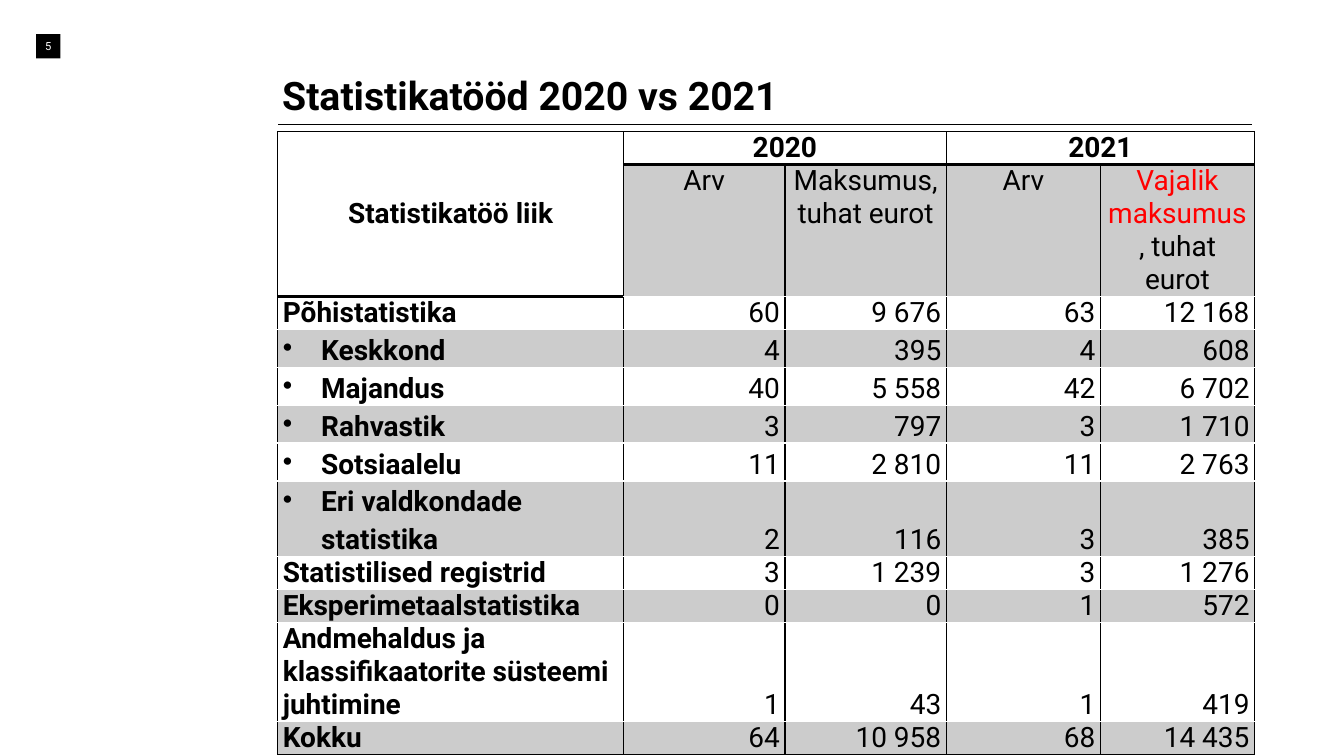
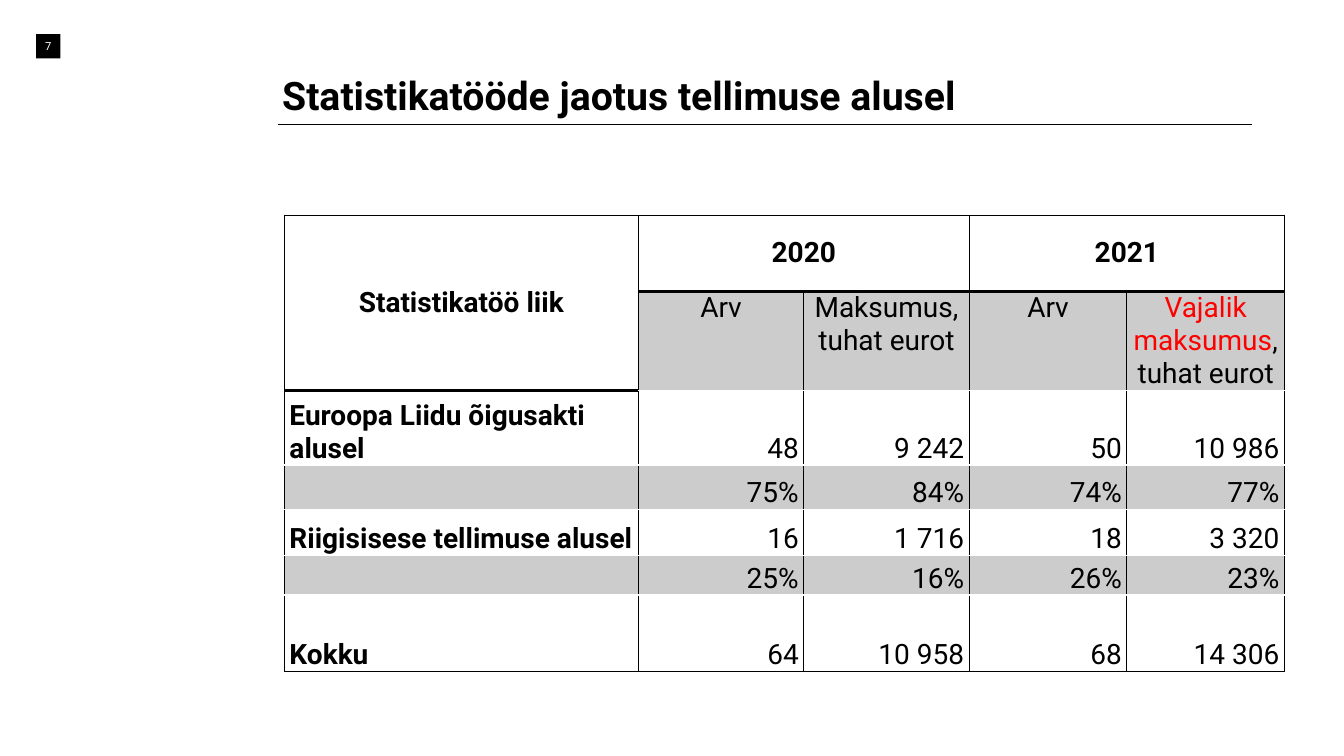
from lxml import etree
from pptx import Presentation
from pptx.dml.color import RGBColor
from pptx.enum.shapes import MSO_CONNECTOR, MSO_SHAPE
from pptx.enum.text import MSO_ANCHOR, MSO_AUTO_SIZE, PP_ALIGN
from pptx.oxml.ns import qn
from pptx.util import Pt

BLACK = RGBColor(0x00, 0x00, 0x00)
WHITE = RGBColor(0xFF, 0xFF, 0xFF)
RED = RGBColor(0xFF, 0x00, 0x00)
LEFT, CENTER, RIGHT = PP_ALIGN.LEFT, PP_ALIGN.CENTER, PP_ALIGN.RIGHT
TOP, MIDDLE, BOTTOM = MSO_ANCHOR.TOP, MSO_ANCHOR.MIDDLE, MSO_ANCHOR.BOTTOM
STRAIGHT, RECTANGLE = MSO_CONNECTOR.STRAIGHT, MSO_SHAPE.RECTANGLE
NO_AUTOFIT = MSO_AUTO_SIZE.NONE

FONT = "Roboto"
TITLE_ONLY = 5
SHADE_ALPHA = 20
THIN, THICK = 1, 2
BULLET_INDENT = 27.4
TITLE_BOX = (198.7, 23.8, 695.5, 64.1)
NUMBER_BOX = (25.9, 24.5, 17.3, 17.3)
RULE_Y = 88.7

TITLE_FONT = {"name": FONT, "size": Pt(28), "bold": True}
NUMBER_FONT = {"name": FONT, "size": Pt(8), "bold": False}
HEAD_FONT = {"name": FONT, "size": Pt(20), "bold": True}
BODY_FONT = {**HEAD_FONT, "bold": False}

LABEL_HEAD = "Statistikatöö liik"
YEARS = ["2020", "2021"]
MEASURES = [
    [("Arv", BLACK)],
    [("Maksumus, tuhat eurot", BLACK)],
    [("Arv", BLACK)],
    [("Vajalik maksumus", RED), (", tuhat eurot", BLACK)],
]

# Each row: label, four values, height
WORK_ROWS = [
    ("Põhistatistika", ("60", "9 676", "63", "12 168"), 21.6),
    ("• Keskkond", ("4", "395", "4", "608"), 23),
    ("• Majandus", ("40", "5 558", "42", "6 702"), 23),
    ("• Rahvastik", ("3", "797", "3", "1 710"), 23),
    ("• Sotsiaalelu", ("11", "2 810", "11", "2 763"), 23),
    ("• Eri valdkondade statistika", ("2", "116", "3", "385"), 48.2),
    ("Statistilised registrid", ("3", "1 239", "3", "1 276"), 21.6),
    ("Eksperimetaalstatistika", ("0", "0", "1", "572"), 21.6),
    ("Andmehaldus ja klassifikaatorite süsteemi juhtimine",
     ("1", "43", "1", "419"), 64.8),
    ("Kokku", ("64", "10 958", "68", "14 435"), 21.6),
]
ORDER_ROWS = [
    ("Euroopa Liidu õigusakti alusel", ("48", "9 242", "50", "10 986"), 53.3),
    ("", ("75%", "84%", "74%", "77%"), 31.7),
    ("Riigisisese tellimuse alusel", ("16", "1 716", "18", "3 320"), 33.1),
    ("", ("25%", "16%", "26%", "23%"), 28.1),
    ("Kokku", ("64", "10 958", "68", "14 306"), 54.7),
]


def points(box):
    return [Pt(length) for length in box]


def apply(target, formats):
    for attribute, value in formats.items():
        setattr(target, attribute, value)


def set_margins(target, horizontal, vertical):
    apply(target, {"margin_left": Pt(horizontal), "margin_right": Pt(horizontal),
                   "margin_top": Pt(vertical), "margin_bottom": Pt(vertical)})


def write(paragraph, runs, formats, alignment):
    paragraph.alignment = alignment
    for text, color in runs:
        run = paragraph.add_run()
        run.text = text
        apply(run.font, formats)
        run.font.color.rgb = color


# Title and the rule below it
def add_title(slide, text, box):
    title = slide.shapes.title
    title.left, title.top, title.width, title.height = points(box)
    frame = title.text_frame
    apply(frame, {"vertical_anchor": BOTTOM, "word_wrap": True,
                  "auto_size": NO_AUTOFIT})
    set_margins(frame, 2.9, 2.9)
    paragraph = frame.paragraphs[0]
    paragraph.line_spacing = 0.9
    write(paragraph, [(text, BLACK)], TITLE_FONT, LEFT)

    left, _, width, _ = box
    rule = slide.shapes.add_connector(
        STRAIGHT, *points((left, RULE_Y, left + width, RULE_Y)))
    rule.line.color.rgb = BLACK
    rule.line.width = Pt(0.5)
    etree.SubElement(rule.element.spPr, qn("a:effectLst"))


# Black square with the slide number
def add_number(slide, number, box):
    badge = slide.shapes.add_shape(RECTANGLE, *points(box))
    badge.shadow.inherit = False
    badge.fill.solid()
    badge.fill.fore_color.rgb = BLACK
    badge.line.fill.background()
    frame = badge.text_frame
    frame.vertical_anchor = MIDDLE
    set_margins(frame, 0, 0)
    write(frame.paragraphs[0], [(number, WHITE)], NUMBER_FONT, CENTER)


def style_cell(cell, shaded, borders):
    set_margins(cell, 3.6, 0)
    if shaded:
        cell.fill.solid()
        cell.fill.fore_color.rgb = BLACK
    else:
        cell.fill.background()
    properties = cell._tc.get_or_add_tcPr()
    for color in properties.iter(qn("a:srgbClr")):
        etree.SubElement(color, qn("a:alpha"), val=str(SHADE_ALPHA * 1000))
    for position, (side, width) in enumerate(borders.items()):
        border = etree.Element(qn(f"a:ln{side}"), w=str(Pt(width)))
        fill = etree.SubElement(border, qn("a:solidFill"))
        etree.SubElement(fill, qn("a:srgbClr"), val=str(BLACK))
        properties.insert(position, border)


def fill_cell(cell, runs, formats, alignment, anchor):
    cell.vertical_anchor = anchor
    write(cell.text_frame.paragraphs[0], runs, formats, alignment)


def fill_label(cell, label):
    paragraph = cell.text_frame.paragraphs[0]
    if label.startswith("• "):
        label = label[2:]
        properties = paragraph._p.get_or_add_pPr()
        properties.set("marL", str(Pt(BULLET_INDENT)))
        properties.set("indent", str(-Pt(BULLET_INDENT)))
        etree.SubElement(properties, qn("a:buChar"), char="•")
        paragraph.line_spacing = 1.15
    fill_cell(cell, [(label, BLACK)] if label else [], HEAD_FONT, LEFT, BOTTOM)


# Table with a two-row head: years, then measures
def add_statistics(slide, origin, widths, head_heights, rows):
    heights = [*head_heights, *(height for _, _, height in rows)]
    box = (*origin, sum(widths), sum(heights))
    table = slide.shapes.add_table(len(heights), len(widths), *points(box)).table
    apply(table, {"first_row": False, "horz_banding": False})
    for column, width in zip(table.columns, widths):
        column.width = Pt(width)
    for row, height in zip(table.rows, heights):
        row.height = Pt(height)

    for row in range(len(heights)):
        for column in range(len(widths)):
            in_label_head = row < 2 and column == 0
            borders = {"L": THIN, "R": THIN}
            if row == 0:
                borders["T"] = THIN
            borders["B"] = THICK if row == 0 or in_label_head else THIN
            shaded = row % 2 == 1 and not in_label_head
            style_cell(table.cell(row, column), shaded, borders)

    table.cell(0, 0).merge(table.cell(1, 0))
    fill_cell(table.cell(0, 0), [(LABEL_HEAD, BLACK)], HEAD_FONT, CENTER, MIDDLE)
    for index, year in enumerate(YEARS):
        first = 1 + 2 * index
        table.cell(0, first).merge(table.cell(0, first + 1))
        fill_cell(table.cell(0, first), [(year, BLACK)], HEAD_FONT, CENTER, MIDDLE)
    for column, runs in enumerate(MEASURES, 1):
        fill_cell(table.cell(1, column), runs, BODY_FONT, CENTER, TOP)

    for row, (label, values, _) in enumerate(rows, 2):
        fill_label(table.cell(row, 0), label)
        for column, value in enumerate(values, 1):
            fill_cell(table.cell(row, column), [(value, BLACK)],
                      BODY_FONT, RIGHT, BOTTOM)


def add_table_slide(deck, number, title, **statistics):
    slide = deck.slides.add_slide(deck.slide_layouts[TITLE_ONLY])
    add_title(slide, title, TITLE_BOX)
    add_number(slide, number, NUMBER_BOX)
    add_statistics(slide, **statistics)


def main():
    deck = Presentation()
    deck.slide_width, deck.slide_height = Pt(960), Pt(540)
    add_table_slide(deck, "5", "Statistikatööd 2020 vs 2021",
                    origin=(198.4, 94),
                    widths=(247, 115.3, 115.3, 110.1, 110.1),
                    head_heights=(21.6, 43.2), rows=WORK_ROWS)
    add_table_slide(deck, "7", "Statistikatööde jaotus tellimuse alusel",
                    origin=(203.2, 153.8),
                    widths=(252.8, 118.2, 118.2, 112.6, 112.6),
                    head_heights=(54.4, 60.5), rows=ORDER_ROWS)
    deck.save("out.pptx")


if __name__ == "__main__":
    main()
